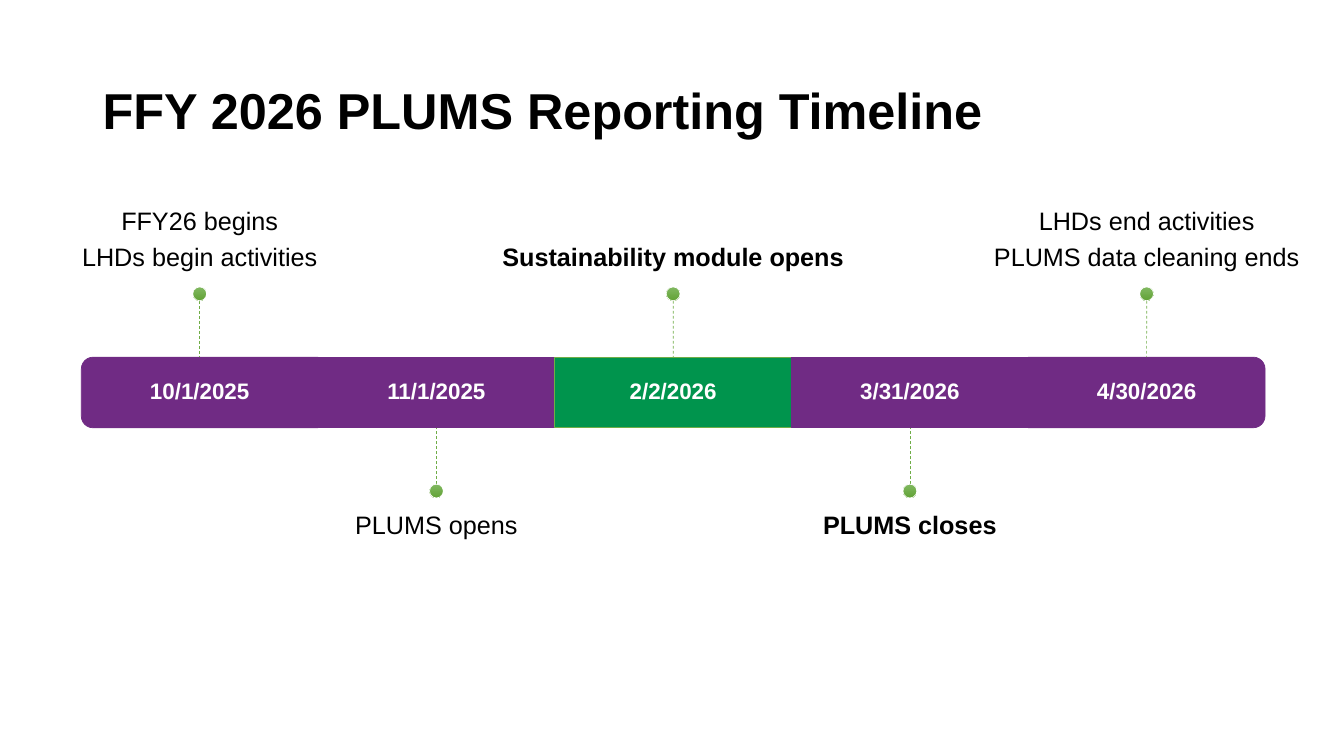
from lxml import etree
from pptx import Presentation
from pptx.dml.color import RGBColor
from pptx.enum.dml import MSO_LINE
from pptx.enum.shapes import MSO_CONNECTOR, MSO_SHAPE
from pptx.enum.text import MSO_ANCHOR as ANCHOR, PP_ALIGN as ALIGN
from pptx.oxml.ns import qn
from pptx.util import Cm, Pt

COLORS = {
    "purple": "702B84", "green": "00944D", "stem": "70AD47",
    "dot_top": "81B861", "dot_bottom": "62A336",
    "white": "FFFFFF", "black": "000000",
}

# date, caption lines, bold caption, bar colour, bar outline
MILESTONES = [
    ("10/1/2025", ["FFY26 begins", "LHDs begin activities"], False, "purple", "purple"),
    ("11/1/2025", ["PLUMS opens"], False, "purple", "purple"),
    ("2/2/2026", ["Sustainability module opens"], True, "green", "stem"),
    ("3/31/2026", ["PLUMS closes"], True, "purple", "purple"),
    ("4/30/2026", ["LHDs end activities", "PLUMS data cleaning ends"], False, "purple", "purple"),
]

# Lengths in cm
STEM, DOT = 1.42, 0.35
CAPTION_W, CAPTION_H, CAPTION_GAP = 9.93, 6.2, 0.38


def rgb(name):
    return RGBColor.from_string(COLORS[name])


def set_attrs(obj, formats):
    for name, value in formats.items():
        setattr(obj, name, value)


def add_text(s, box, lines, size, color, bold=True, align=ALIGN.CENTER,
             anchor=ANCHOR.MIDDLE, margins=(0, 0, 0, 0), space_after=0):
    sp = s.shapes.add_textbox(*map(Cm, box))
    tf = sp.text_frame
    left, top, right, bottom = map(Cm, margins)
    set_attrs(tf, {"word_wrap": True, "vertical_anchor": anchor,
                   "margin_left": left, "margin_top": top,
                   "margin_right": right, "margin_bottom": bottom})
    for i, line in enumerate(lines):
        p = tf.paragraphs[0] if i == 0 else tf.add_paragraph()
        set_attrs(p, {"alignment": align, "line_spacing": 0.9,
                      "space_after": Pt(space_after)})
        r = p.add_run()
        r.text = line
        set_attrs(r.font, {"name": "Arial", "size": Pt(size), "bold": bold})
        r.font.color.rgb = rgb(color)
    return sp


def add_outlined(s, kind, box, line_color):
    sp = s.shapes.add_shape(kind, *map(Cm, box))
    sp.shadow.inherit = False
    sp.line.color.rgb = rgb(line_color)
    sp.line.width = Pt(0.5)
    return sp


def add_bar_segment(s, box, fill, line, rotation):
    x, y, w, h = box
    kind = MSO_SHAPE.RECTANGLE
    if rotation:
        # Rounded ends are upright shapes turned about the segment's centre
        kind = MSO_SHAPE.ROUND_2_SAME_RECTANGLE
        box = (x + (w - h) / 2, y + (h - w) / 2, h, w)
    sp = add_outlined(s, kind, box, line)
    sp.rotation = rotation
    sp.fill.solid()
    sp.fill.fore_color.rgb = rgb(fill)


def add_stem(s, date, center, dot_edge, side):
    stem = s.shapes.add_connector(MSO_CONNECTOR.STRAIGHT, Cm(center), Cm(dot_edge),
                                  Cm(center), Cm(dot_edge))
    stem.end_connect(date, side)
    set_attrs(stem.line, {"width": Pt(0.5), "dash_style": MSO_LINE.DASH})
    stem.line.color.rgb = rgb("stem")
    etree.SubElement(stem.line._get_or_add_ln().getparent(), qn("a:effectLst"))


def add_dot(s, center, top):
    dot = add_outlined(s, MSO_SHAPE.OVAL, (center - DOT / 2, top, DOT, DOT), "white")
    dot.fill.gradient()
    dot.fill.gradient_angle = 270
    for stop, color in zip(dot.fill.gradient_stops, ("dot_top", "dot_bottom")):
        stop.color.rgb = rgb(color)


def add_milestone(s, box, milestone, above, rotation):
    date_text, caption, bold, fill, line = milestone
    x, y, w, h = box
    center = x + w / 2

    # Bar segment and its date
    add_bar_segment(s, box, fill, line, rotation)
    date = add_text(s, box, [date_text], 16, "white", margins=(0.33,) * 4)

    # Caption, stem and dot on alternating sides of the bar
    if above:
        dot_edge, side = y - STEM, 0
        dot_top = dot_edge - DOT
        caption_top, anchor = dot_top - CAPTION_H, ANCHOR.BOTTOM
        margins = (0, 0, 0, CAPTION_GAP)
    else:
        dot_edge, side = y + h + STEM, 2
        dot_top = dot_edge
        caption_top, anchor = dot_top + DOT, ANCHOR.TOP
        margins = (0, CAPTION_GAP, 0, 0)
    add_text(s, (center - CAPTION_W / 2, caption_top, CAPTION_W, CAPTION_H),
             caption, 18, "black", bold, anchor=anchor, margins=margins, space_after=6.3)
    add_stem(s, date, center, dot_edge, side)
    add_dot(s, center, dot_top)


def add_timeline(s, box):
    x, y, w, h = box
    step = w / len(MILESTONES)
    rotations = {0: 270, len(MILESTONES) - 1: 90}
    for i, milestone in enumerate(MILESTONES):
        add_milestone(s, (x + i * step, y, step, h), milestone,
                      i % 2 == 0, rotations.get(i, 0))


def add_title(s, box):
    add_text(s, box, ["FFY 2026 PLUMS Reporting Timeline"], 36, "black",
             align=ALIGN.LEFT, margins=(0.25, 0.13, 0.25, 0.13))


def main():
    prs = Presentation()
    set_attrs(prs, {"slide_width": Cm(33.87), "slide_height": Cm(19.05)})
    s = prs.slides.add_slide(prs.slide_layouts[6])
    add_title(s, (2.34, 1.02, 29.21, 3.68))
    add_timeline(s, (2.05, 9, 29.83, 1.78))
    prs.save("out.pptx")


if __name__ == "__main__":
    main()
